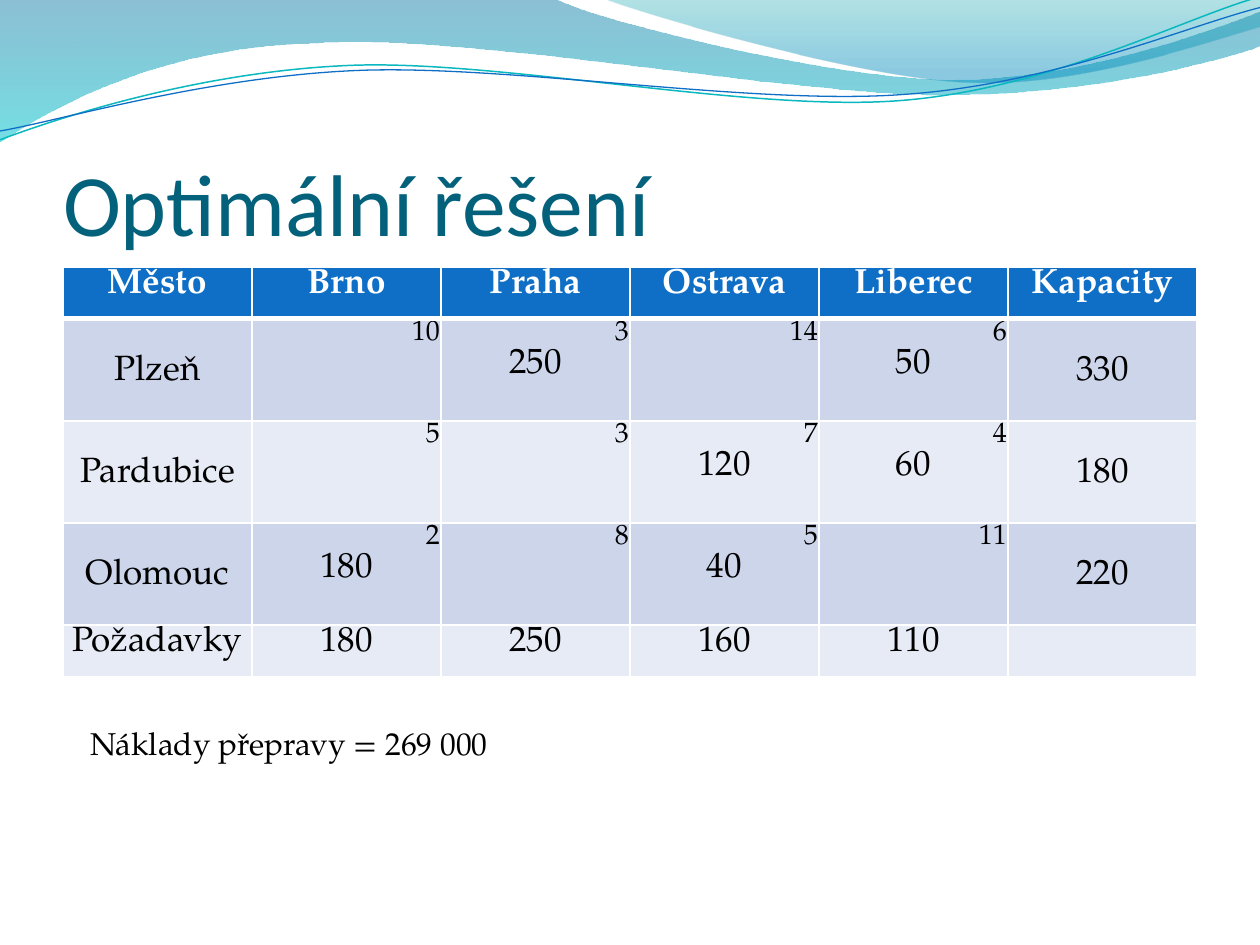
"""Build the slide with the optimal solution of a transport problem."""
from lxml import etree
from pptx import Presentation
from pptx.dml.color import RGBColor
from pptx.enum import text
from pptx.oxml import ns
from pptx.util import Inches, Pt

TITLE_COLOR = RGBColor(0x04, 0x61, 0x7B)
BLUE = RGBColor(0x0F, 0x6F, 0xC6)
TURQUOISE = RGBColor(0x0A, 0xB8, 0xBF)
DARK_BAND = RGBColor(0xCC, 0xD5, 0xEA)
LIGHT_BAND = RGBColor(0xE7, 0xEB, 0xF5)
WHITE = RGBColor(0xFF, 0xFF, 0xFF)
BLACK = RGBColor(0, 0, 0)
BODY_FONT = "TeX Gyre Pagella"


def draw_outline(slide, segments, close):
    """Add a freeform of lines (2 numbers) and cubic curves (6 numbers) behind the title."""
    points = [(Inches(s[i]), Inches(s[i + 1])) for s in segments for i in range(0, len(s), 2)]
    builder = slide.shapes.build_freeform(*points[0])
    builder.add_line_segments(points[1:], close=close)
    shape = builder.convert_to_shape()
    shape.shadow.inherit = False
    lines = iter(list(shape._element.spPr.iter(ns.qn("a:lnTo"))))
    for segment in segments[1:]:
        line = next(lines)
        if len(segment) == 6:
            curve = etree.Element(ns.qn("a:cubicBezTo"))
            line.addprevious(curve)
            for corner in (line, next(lines), next(lines)):
                curve.append(corner[0])
                corner.getparent().remove(corner)
    slide.shapes.title._element.addprevious(shape._element)
    return shape


def style(paragraph, size, color, font=BODY_FONT, bold=False, align=text.PP_ALIGN.LEFT):
    """Format a paragraph and its runs."""
    paragraph.alignment = align
    for run in paragraph.runs:
        run.font.size = Pt(size)
        run.font.name = font
        run.font.bold = bold
        run.font.color.rgb = color


presentation = Presentation()
presentation.slide_width, presentation.slide_height = Inches(10), Inches(7.5)
slide = presentation.slides.add_slide(presentation.slide_layouts[5])

bands = [
    ([(0, 0), (4.4, -0.01), (4.76, 0.17, 6.64, 0.63, 7.58, 0.63), (8.53, 0.63, 9.58, 0.26, 10, 0.09),
      (10.01, 0.36), (9.83, 0.44, 8.7, 0.76, 7.46, 0.75), (6.22, 0.75, 3.82, 0.28, 2.57, 0.34),
      (1.29, 0.36, 0.46, 0.83, -0.01, 1.13)],
     [(0, RGBColor(0x00, 0x74, 0xA1), 45), (1, RGBColor(0x00, 0xC6, 0xCF), 55)]),
    ([(4.79, -0.01), (5.09, 0.11, 6.82, 0.62, 7.69, 0.65), (8.56, 0.69, 9.61, 0.32, 10, 0.21), (10, 0)],
     [(0, RGBColor(0x00, 0xA1, 0xA9), 30), (0.8, RGBColor(0x00, 0x8B, 0xBF), 45)]),
]
for segments, stops in bands:
    band = draw_outline(slide, segments, close=True)
    band.line.fill.background()
    band.fill.gradient()
    band.fill.gradient_angle = 270
    for stop, (position, color, opacity) in zip(band.fill.gradient_stops, stops):
        stop.position = position
        stop.color.rgb = color
    colors = band._element.spPr.iter(ns.qn("a:srgbClr"))
    for color_element, (position, color, opacity) in zip(colors, stops):
        etree.SubElement(color_element, ns.qn("a:alpha"), val=str(opacity * 1000))

waves = [
    ([(0, 1.11), (0.48, 0.93, 1.58, 0.57, 2.77, 0.52), (3.95, 0.47, 5.93, 0.89, 7.13, 0.8),
      (8.33, 0.71, 9.38, 0.15, 9.98, -0.02)], TURQUOISE, 0.85),
    ([(0, 1.04), (0.47, 0.96, 1.64, 0.61, 2.83, 0.56), (4.03, 0.51, 5.97, 0.84, 7.17, 0.75),
      (8.36, 0.67, 9.41, 0.21, 10, 0.06)], BLUE, 0.75),
]
for segments, color, width in waves:
    wave = draw_outline(slide, segments, close=False)
    wave.fill.background()
    wave.line.color.rgb = color
    wave.line.width = Pt(width)

title = slide.shapes.title
title.left, title.top, title.width, title.height = Inches(0.5), Inches(0.77), Inches(9), Inches(1.25)
frame = title.text_frame
frame.text = "Optimální řešení"
frame.vertical_anchor = text.MSO_ANCHOR.BOTTOM
frame.margin_left = frame.margin_right = frame.margin_bottom = 0
frame.margin_top = Inches(0.05)
style(frame.paragraphs[0], 50, TITLE_COLOR, font="Calibri")

rows = [
    ["Město", "Brno", "Praha", "Ostrava", "Liberec", "Kapacity"],
    ["Plzeň", ("10", ""), ("3", "250"), ("14", ""), ("6", "50"), "330"],
    ["Pardubice", ("5", ""), ("3", ""), ("7", "120"), ("4", "60"), "180"],
    ["Olomouc", ("2", "180"), ("8", ""), ("5", "40"), ("11", ""), "220"],
    ["Požadavky", "180", "250", "160", "110", ""],
]
row_heights = [0.41, 0.81, 0.81, 0.81, 0.41]
table = slide.shapes.add_table(len(rows), len(rows[0]), Inches(0.5), Inches(2.12), Inches(9), Inches(3.24)).table
for row_index, (values, height) in enumerate(zip(rows, row_heights)):
    table.rows[row_index].height = Inches(height)
    is_header = row_index == 0
    is_tall = height > 0.5
    ink = WHITE if is_header else BLACK
    for column_index, value in enumerate(values):
        cell = table.cell(row_index, column_index)
        cell.margin_left = cell.margin_right = cell.margin_top = Inches(0.01)
        cell.margin_bottom = 0
        if isinstance(value, tuple):
            cost, amount = value
            cell.text_frame.text = cost
            style(cell.text_frame.paragraphs[0], 16, ink, align=text.PP_ALIGN.RIGHT)
            if amount:
                paragraph = cell.text_frame.add_paragraph()
                paragraph.text = amount
                style(paragraph, 20, ink, align=text.PP_ALIGN.CENTER)
        elif value:
            if is_tall:
                cell.margin_top = Inches(0.29)
            cell.text_frame.text = value
            style(cell.text_frame.paragraphs[0], 20, ink, bold=is_header, align=text.PP_ALIGN.CENTER)
        properties = cell._tc.get_or_add_tcPr()
        for side in ("L", "R", "T", "B"):
            thick = (is_header and side == "B") or (row_index == 1 and side == "T")
            border = etree.SubElement(properties, ns.qn(f"a:ln{side}"), w=str(Pt(3 if thick else 1)))
            fill = etree.SubElement(border, ns.qn("a:solidFill"))
            etree.SubElement(fill, ns.qn("a:srgbClr"), val=str(WHITE))
        cell.fill.solid()
        cell.fill.fore_color.rgb = BLUE if is_header else DARK_BAND if row_index % 2 else LIGHT_BAND

cost_note = slide.shapes.add_textbox(Inches(0.62), Inches(5.7), Inches(4.84), Inches(0.4))
cost_note.text_frame.word_wrap = True
cost_note.text_frame.auto_size = text.MSO_AUTO_SIZE.SHAPE_TO_FIT_TEXT
cost_note.text_frame.text = "Náklady přepravy = 269 000"
style(cost_note.text_frame.paragraphs[0], 18, BLACK)

presentation.save("out.pptx")
